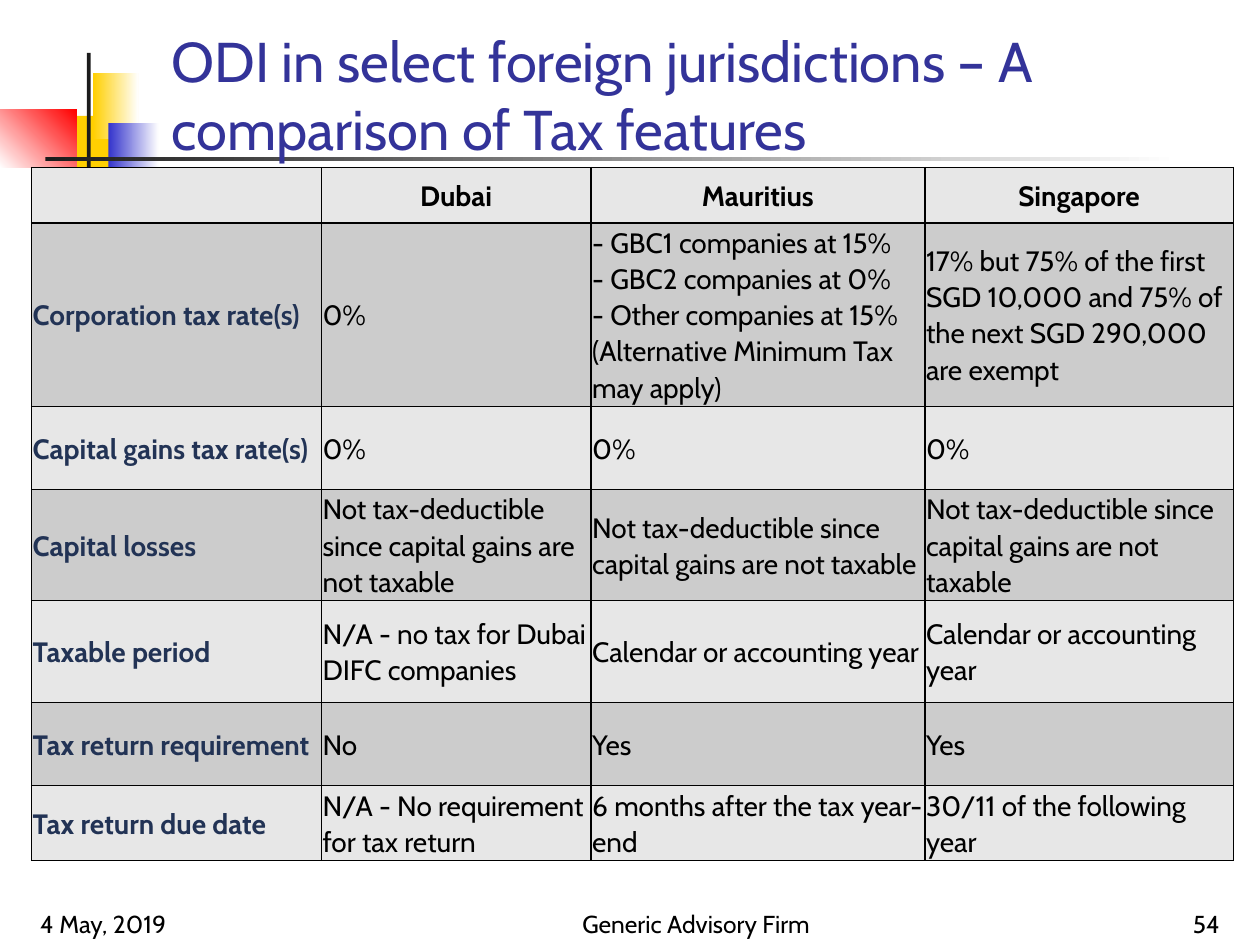
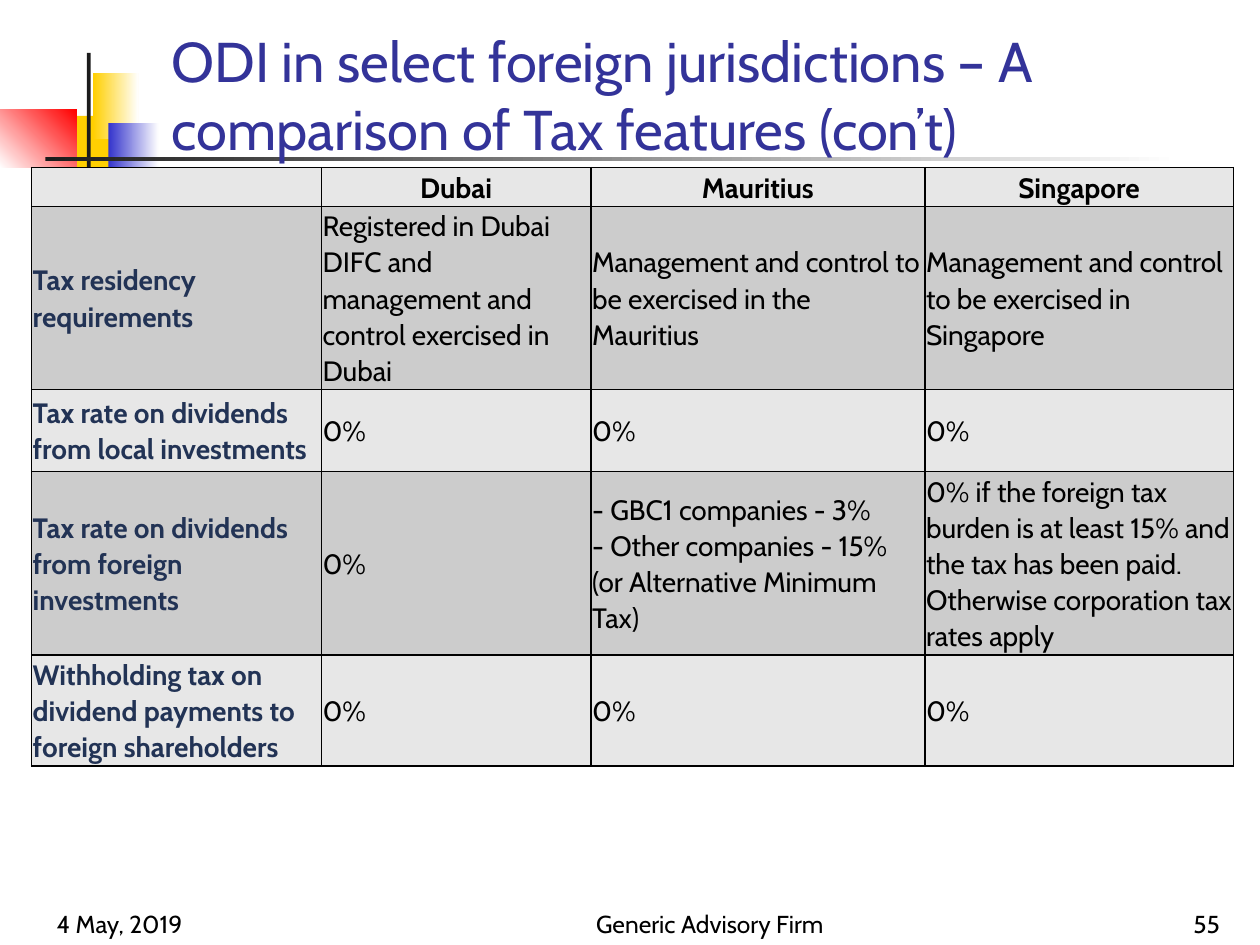
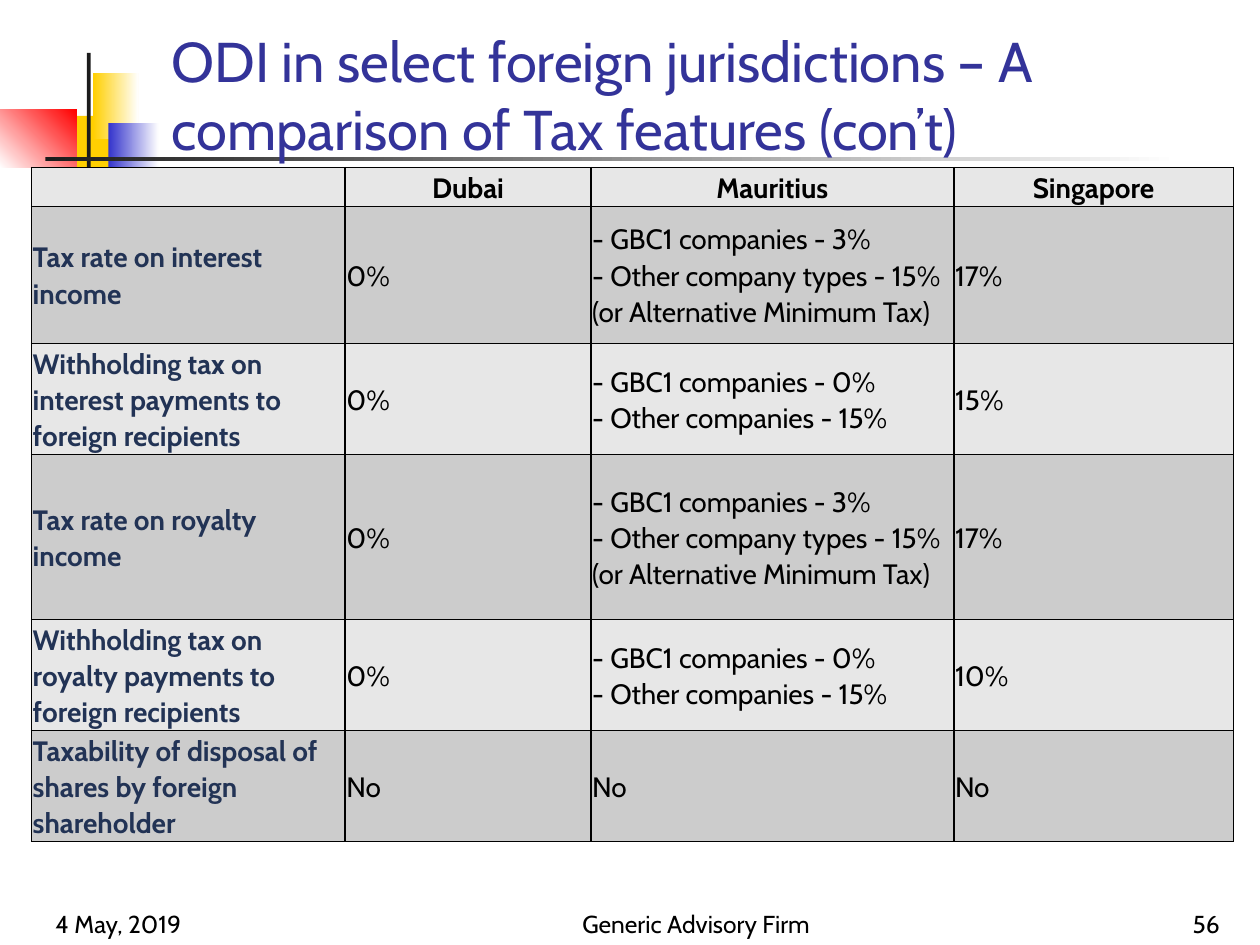
from copy import deepcopy

from lxml import etree
from pptx import Presentation
from pptx.dml.color import RGBColor
from pptx.enum.shapes import MSO_SHAPE
from pptx.enum.text import MSO_ANCHOR, MSO_AUTO_SIZE, PP_ALIGN
from pptx.oxml.ns import qn
from pptx.util import Inches, Pt

RECT = MSO_SHAPE.RECTANGLE
BOTTOM, MIDDLE = MSO_ANCHOR.BOTTOM, MSO_ANCHOR.MIDDLE
LEFT, CENTER, RIGHT = PP_ALIGN.LEFT, PP_ALIGN.CENTER, PP_ALIGN.RIGHT
NO_FIT = MSO_AUTO_SIZE.NONE

FONT = "Cabin"
COLORS = {
    "text": "000000",
    "title": "333399",
    "label": "223355",
    "light": "E7E7E7",
    "dark": "CCCCCC",
    "border": "000000",
    "yellow": "FFCF01",
    "blue": "3333CC",
    "red": "FF0000",
    "bar": "1C1C1C",
    "white": "FFFFFF",
}

TITLE = "ODI in select foreign jurisdictions – A comparison of Tax features"
HEADER = ["", "Dubai", "Mauritius", "Singapore"]
NO_LOSSES = "Not tax-deductible since capital gains are not taxable"
INCOME_RATES = "- GBC1 companies - 3%\n- Other company types - 15% (or Alternative Minimum Tax)"
WITHHOLDING_RATES = "- GBC1 companies - 0%\n- Other companies - 15%"

DECORATIONS = [
    (0.46, 0.92, 0.48, 0.52, ["yellow"], 0),
    (0.59, 1.33, 0.46, 0.52, ["blue"], 0),
    (0.74, 0.58, 0.36, 0.52, ["yellow", "white"], 0),
    (0.86, 0.98, 0.4, 0.52, ["blue", "white"], 0),
    (0, 0.87, 0.61, 0.46, ["white", "red"], 45),
    (0.69, 0.42, 0.03, 1.15, ["bar"], 0),
    (0.36, 1.25, 9, 0.03, ["bar", "white"], 0),
]

SLIDES = [
    {
        "title": TITLE,
        "number": "54",
        "date_left": 0.22,
        "firm_left": 3.94,
        "cols": [2.3, 2.14, 2.65, 2.45],
        "heights": [0.44, 1.35, 0.66, 0.81, 0.81, 0.66, 0.54],
        "rows": [
            ["Corporation tax rate(s)", "0%",
             "- GBC1 companies at 15%\n- GBC2 companies at 0%\n"
             "- Other companies at 15% (Alternative Minimum Tax may apply)",
             "17% but 75% of the first SGD 10,000 and 75% of the next SGD 290,000 are exempt"],
            ["Capital gains tax rate(s)", "0%", "0%", "0%"],
            ["Capital losses", NO_LOSSES, NO_LOSSES, NO_LOSSES],
            ["Taxable period", "N/A - no tax for Dubai DIFC companies",
             "Calendar or accounting year", "Calendar or accounting year"],
            ["Tax return requirement", "No", "Yes", "Yes"],
            ["Tax return due date", "N/A - No requirement for tax return",
             "6 months after the tax year-end", "30/11 of the following year"],
        ],
    },
    {
        "title": TITLE + " (con’t)",
        "number": "55",
        "date_left": 0.35,
        "firm_left": 4.05,
        "cols": [2.3, 2.14, 2.65, 2.45],
        "heights": [0.22, 1.09, 0.65, 1.31, 0.87],
        "rows": [
            ["Tax residency requirements",
             "Registered in Dubai DIFC and management and control exercised in Dubai",
             "Management and control to be exercised in the Mauritius",
             "Management and control to be exercised in Singapore"],
            ["Tax rate on dividends from local investments", "0%", "0%", "0%"],
            ["Tax rate on dividends from foreign investments", "0%",
             "- GBC1 companies - 3%\n- Other companies - 15% (or Alternative Minimum Tax)",
             "0% if the foreign tax burden is at least 15% and the tax has been paid. "
             "Otherwise corporation tax rates apply"],
            ["Withholding tax on dividend payments to foreign shareholders", "0%", "0%", "0%"],
        ],
    },
    {
        "title": TITLE + " (con’t)",
        "number": "56",
        "date_left": 0.34,
        "firm_left": 3.94,
        "cols": [2.49, 1.95, 2.88, 2.22],
        "heights": [0.22, 1.09, 0.65, 1.31, 0.58, 0.58],
        "rows": [
            ["Tax rate on interest income", "0%", INCOME_RATES, "17%"],
            ["Withholding tax on interest payments to foreign recipients", "0%",
             WITHHOLDING_RATES, "15%"],
            ["Tax rate on royalty income", "0%", INCOME_RATES, "17%"],
            ["Withholding tax on royalty payments to foreign recipients", "0%",
             WITHHOLDING_RATES, "10%"],
            ["Taxability of disposal of shares by foreign shareholder", "No", "No", "No"],
        ],
    },
]


def style_text(p, size, color, align=LEFT, bold=False):
    p.alignment = align
    for r in p.runs:
        r.font.name = FONT
        r.font.size = Pt(size)
        r.font.bold = bold
        r.font.color.rgb = RGBColor.from_string(COLORS[color])
    for br in p._p.findall(qn("a:br")):
        br.append(deepcopy(p.runs[0].font._rPr))
    if not p.runs:
        etree.SubElement(p._p, qn("a:endParaRPr"), sz=str(size * 100))


def add_borders(cell):
    tcPr = cell._tc.get_or_add_tcPr()
    for side in ("lnL", "lnR", "lnT", "lnB"):
        ln = etree.SubElement(tcPr, qn(f"a:{side}"), w=str(Pt(1)))
        fill = etree.SubElement(ln, qn("a:solidFill"))
        etree.SubElement(fill, qn("a:srgbClr"), val=COLORS["border"])


prs = Presentation()
prs.slide_width, prs.slide_height = Inches(10), Inches(7.5)
layout = prs.slide_layouts[5]

title = layout.placeholders[0]
title.left, title.top = Inches(1.26), Inches(0.23)
title.width, title.height = Inches(8.52), Inches(1.1)

for number, data in enumerate(SLIDES):
    s = prs.slides.add_slide(layout)

    if number == 0:
        for i, (x, y, w, h, names, angle) in enumerate(DECORATIONS):
            sp = s.shapes.add_shape(RECT, Inches(x), Inches(y), Inches(w), Inches(h))
            sp.shadow.inherit = False
            sp.line.fill.background()
            if len(names) == 1:
                sp.fill.solid()
                sp.fill.fore_color.rgb = RGBColor.from_string(COLORS[names[0]])
            else:
                sp.fill.gradient()
                sp.fill.gradient_angle = angle
                for stop, name in zip(sp.fill.gradient_stops, names):
                    stop.color.rgb = RGBColor.from_string(COLORS[name])
            sp.element.nvSpPr.cNvPr.set("id", str(20 + i))
            layout.shapes.element.append(sp.element)

    tf = s.shapes.title.text_frame
    tf.text = data["title"]
    tf.vertical_anchor = BOTTOM
    tf.auto_size = NO_FIT
    style_text(tf.paragraphs[0], 32, "title")

    rows = [HEADER] + data["rows"]
    table = s.shapes.add_table(
        len(rows), len(HEADER), Inches(0.25), Inches(1.33),
        Inches(sum(data["cols"])), Inches(sum(data["heights"])),
    ).table
    for col, width in zip(table.columns, data["cols"]):
        col.width = Inches(width)
    for row, height in zip(table.rows, data["heights"]):
        row.height = Inches(height)

    for i, texts in enumerate(rows):
        for j, text in enumerate(texts):
            cell = table.cell(i, j)
            cell.margin_left = cell.margin_right = Inches(0.01)
            cell.margin_top = cell.margin_bottom = Inches(0.01)
            cell.vertical_anchor = MIDDLE
            add_borders(cell)
            cell.fill.solid()
            cell.fill.fore_color.rgb = RGBColor.from_string(COLORS["dark" if i % 2 else "light"])
            p = cell.text_frame.paragraphs[0]
            p.text = text
            p.line_spacing = 1.07
            style_text(p, 16, "label" if i and j == 0 else "text",
                       LEFT if i else CENTER, i == 0 or j == 0)

    footers = [
        (data["date_left"], 2.08, "4 May, 2019", LEFT),
        (data["firm_left"], 3.17, "Generic Advisory Firm", CENTER),
        (7.7, 2.08, data["number"], RIGHT),
    ]
    for x, w, text, align in footers:
        tf = s.shapes.add_textbox(Inches(x), Inches(7), Inches(w), Inches(0.5)).text_frame
        tf.word_wrap = True
        tf.vertical_anchor = BOTTOM
        tf.text = text
        style_text(tf.paragraphs[0], 14, "text", align)

prs.save("out.pptx")
